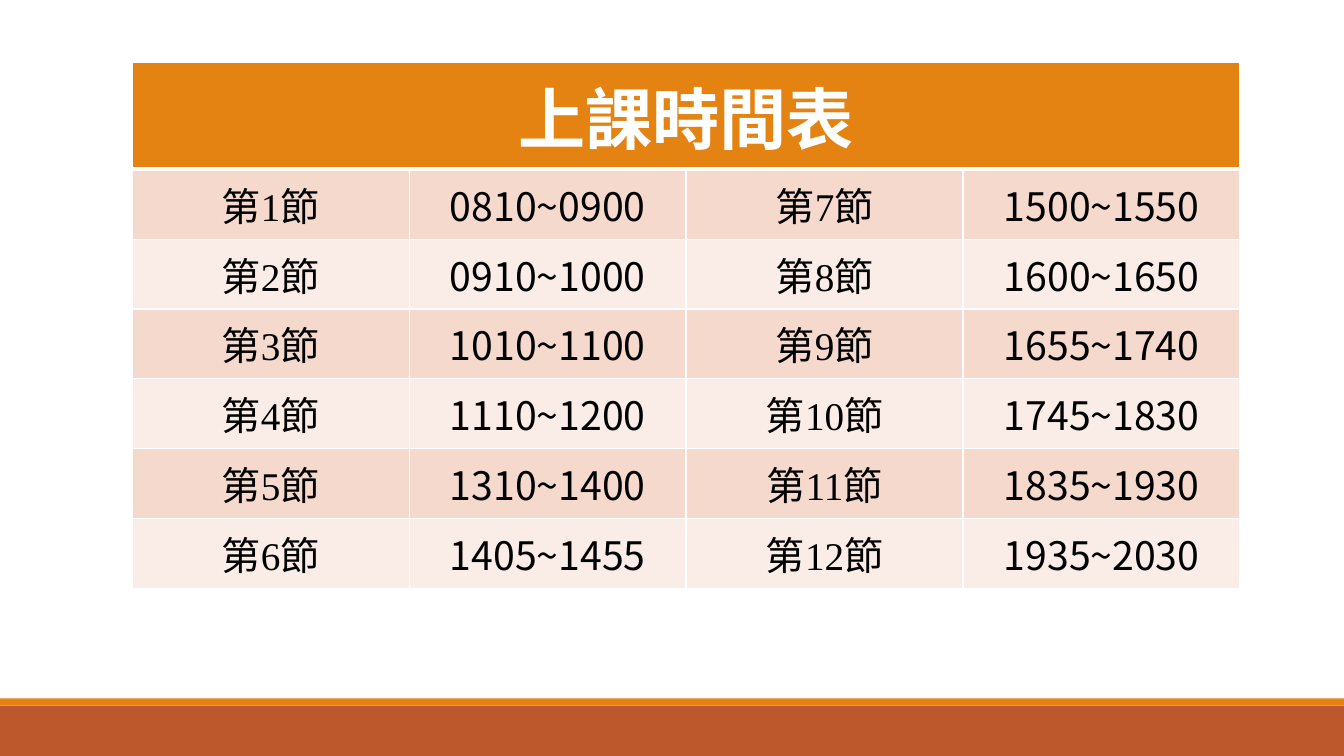
from lxml.etree import SubElement
from pptx import Presentation
from pptx.dml.color import RGBColor
from pptx.enum.shapes import MSO_SHAPE
from pptx.enum.text import MSO_ANCHOR, PP_ALIGN
from pptx.oxml.ns import qn
from pptx.util import Cm, Pt

# Content
TITLE = "上課時間表"
TIMES = [
    "0810~0900", "0910~1000", "1010~1100", "1110~1200", "1310~1400", "1405~1455",
    "1500~1550", "1600~1650", "1655~1740", "1745~1830", "1835~1930", "1935~2030",
]
HALF = len(TIMES) // 2

# Look
HUE = {"head": "E48312", "foot": "BD582C", "odd": "F5D9CC", "even": "FAEDE7",
       "rule": "FFFFFF", "light": "FFFFFF", "dark": "000000"}
SANS = "Noto Sans CJK TC"
HEAD = {"name": "Noto Sans CJK SC", "size": Pt(48), "bold": True}
BODY = {"size": Pt(28), "bold": False}
TIGHT = {"margin_left": Cm(0.05), "margin_right": Cm(0.05), "margin_top": 0,
         "margin_bottom": 0, "vertical_anchor": MSO_ANCHOR.MIDDLE}

# Places
WIDE, HIGH = Cm(33.87), Cm(19.05)
LEFT, TOP = Cm(3.33), Cm(1.56)
COL, TALL, ROW = Cm(6.98), Cm(2.54), Cm(1.76)
BANDS = [("foot", Cm(17.78), Cm(1.27)), ("head", Cm(17.6), Cm(0.18))]


def shade(fill, hue):
    fill.solid()
    fill.fore_color.rgb = RGBColor.from_string(HUE[hue])


def apply(item, form):
    for key, value in form.items():
        setattr(item, key, value)


def write(cell, text, form, east, hue):
    para = cell.text_frame.paragraphs[0]
    para.alignment = PP_ALIGN.CENTER
    run = para.add_run()
    run.text = text
    apply(run.font, form)
    run.font.color.rgb = RGBColor.from_string(HUE[hue])
    SubElement(run.font._element, qn("a:ea"), typeface=east)


def edge(cell, top=1, base=1):
    props = cell._tc.get_or_add_tcPr()
    for side, width in (("L", 1), ("R", 1), ("T", top), ("B", base)):
        line = SubElement(props, qn("a:ln" + side), w=str(Pt(width)))
        fill = SubElement(line, qn("a:solidFill"))
        SubElement(fill, qn("a:srgbClr"), val=HUE["rule"])


deck = Presentation()
deck.slide_width, deck.slide_height = WIDE, HIGH
slide = deck.slides.add_slide(deck.slide_layouts[6])

# Bands along the foot of the slide
for hue, top, high in BANDS:
    band = slide.shapes.add_shape(MSO_SHAPE.RECTANGLE, 0, top, WIDE, high)
    band.shadow.inherit = False
    shade(band.fill, hue)
    band.line.fill.background()

# Timetable grid
grid = slide.shapes.add_table(HALF + 1, 4, LEFT, TOP, COL * 4, TALL + ROW * HALF).table
for col in grid.columns:
    col.width = COL
for num, row in enumerate(grid.rows):
    row.height = ROW if num else TALL

# Heading row
for cell in grid.rows[0].cells:
    edge(cell, base=3)
    shade(cell.fill, "head")
grid.cell(0, 0).merge(grid.cell(0, 3))
write(grid.cell(0, 0), TITLE, HEAD, HEAD["name"], "light")

# Periods run down the left half, then the right half
for spot, time in enumerate(TIMES):
    side, row = divmod(spot, HALF)
    pair = ((f"第{spot + 1}節", "Times New Roman"), (time, SANS))
    for step, (text, face) in enumerate(pair):
        cell = grid.cell(row + 1, side * 2 + step)
        apply(cell, TIGHT)
        edge(cell, top=1 if row else 3)
        shade(cell.fill, "even" if row % 2 else "odd")
        write(cell, text, {**BODY, "name": face}, SANS, "dark")

deck.save("out.pptx")
